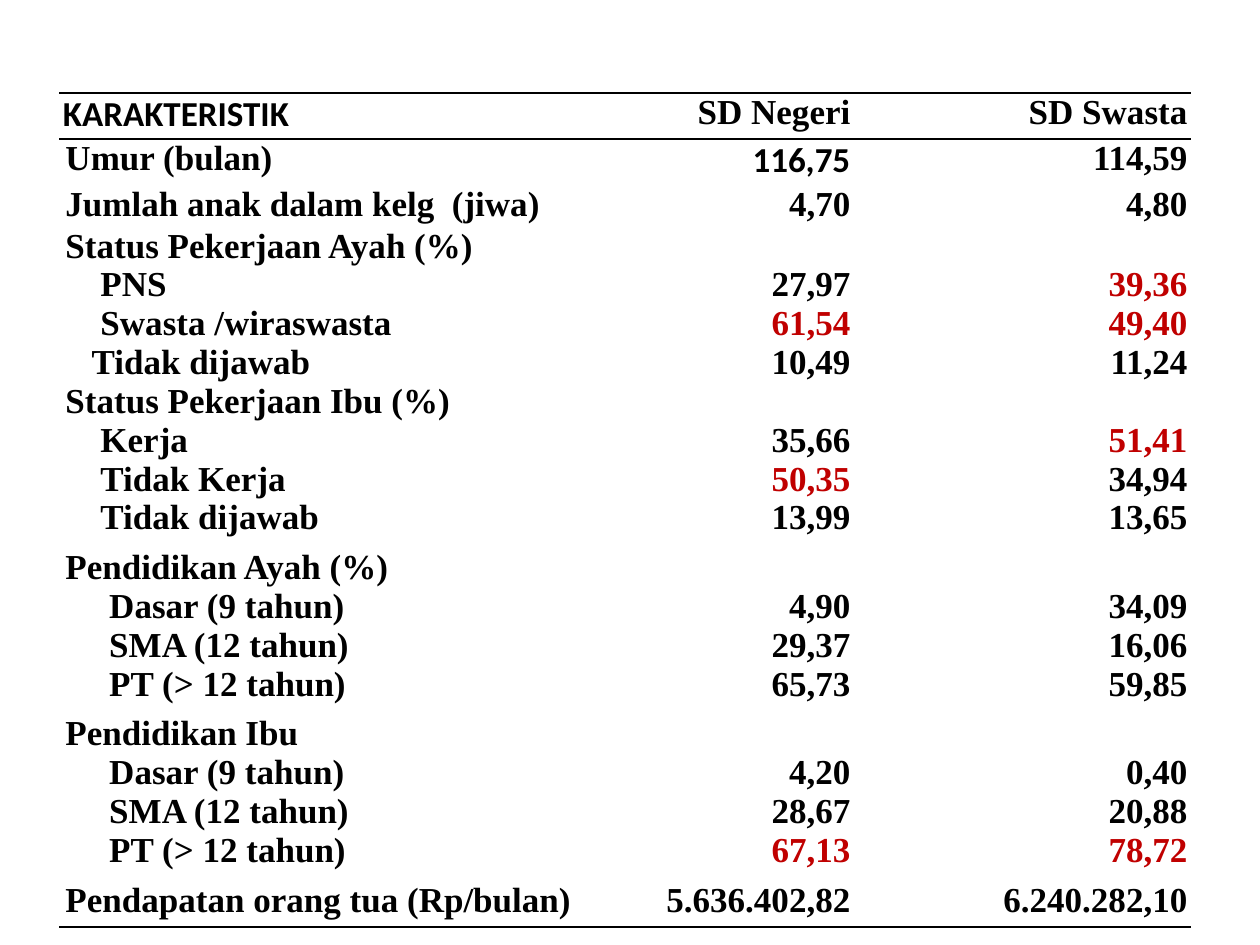
from lxml.etree import SubElement
from pptx import Presentation
from pptx.dml.color import RGBColor
from pptx.enum.text import PP_ALIGN
from pptx.oxml.ns import qn
from pptx.util import Pt

COLORS = {name: RGBColor.from_string(value) for name, value in {
    "black": "000000", "white": "FFFFFF", "red": "C00000"}.items()}
SERIF, SANS = "Times New Roman", "Calibri"
TEXT_SIZE = 20
LINE_HEIGHT = 22.15
FIRST_INDENT = 1.44
COLUMN_WIDTHS = [312, 142.4, 192.6]

# Row height, labels with their indents, then the values of both schools
ROWS = [
    (26.4, [("KARAKTERISTIK", 0)], ["SD Negeri"], ["SD Swasta"]),
    (26.4, [("Umur (bulan)", 0)], ["116,75"], ["114,59"]),
    (23.8, [("Jumlah anak dalam kelg  (jiwa)", 0)], ["4,70"], ["4,80"]),
    (88.6, [("Status Pekerjaan Ayah (%)", 0), ("PNS", 20),
            ("Swasta /wiraswasta", 20), ("Tidak dijawab", 15)],
     ["27,97", "61,54", "10,49"], ["39,36", "49,40", "11,24"]),
    (95, [("Status Pekerjaan Ibu (%)", 0), ("Kerja", 20),
          ("Tidak Kerja", 20), ("Tidak dijawab", 20)],
     ["35,66", "50,35", "13,99"], ["51,41", "34,94", "13,65"]),
    (95, [("Pendidikan Ayah (%)", 0), ("Dasar (9 tahun)", 25),
          ("SMA (12 tahun)", 25), ("PT (> 12 tahun)", 25)],
     ["4,90", "29,37", "65,73"], ["34,09", "16,06", "59,85"]),
    (95, [("Pendidikan Ibu", 0), ("Dasar (9 tahun)", 25),
          ("SMA (12 tahun)", 25), ("PT (> 12 tahun)", 25)],
     ["4,20", "28,67", "67,13"], ["0,40", "20,88", "78,72"]),
    (26.4, [("Pendapatan orang tua (Rp/bulan)", 0)],
     ["5.636.402,82"], ["6.240.282,10"]),
]
HIGHLIGHTS = {"39,36", "61,54", "49,40", "51,41", "50,35", "67,13", "78,72"}
SANS_TEXTS = {"KARAKTERISTIK", "116,75"}
BORDERS = {0: ["a:lnT", "a:lnB"], len(ROWS) - 1: ["a:lnB"]}


def add_border(cell, tag):
    line = SubElement(cell._tc.get_or_add_tcPr(), qn(tag), w=str(Pt(1)))
    fill = SubElement(line, qn("a:solidFill"))
    SubElement(fill, qn("a:srgbClr"), val=str(COLORS["black"]))


presentation = Presentation()
presentation.slide_width, presentation.slide_height = Pt(720), Pt(540)
slide = presentation.slides.add_slide(presentation.slide_layouts[6])

# Table without a banded style
frame = slide.shapes.add_table(
    len(ROWS), len(COLUMN_WIDTHS), Pt(33.8), Pt(53),
    Pt(sum(COLUMN_WIDTHS)), Pt(sum(row[0] for row in ROWS)))
table = frame.table
table.first_row = table.horz_banding = False
style = table._tbl.tblPr.find(qn("a:tableStyleId"))
style.text = "{2D5ABB26-0587-4C30-8999-92F81FD0307C}"
for column, width in zip(table.columns, COLUMN_WIDTHS):
    column.width = Pt(width)

# Cells
for row_index, (height, labels, *values) in enumerate(ROWS):
    table.rows[row_index].height = Pt(height)
    contents = [[label for label, indent in labels], *values]
    for column_index, texts in enumerate(contents):
        cell = table.cell(row_index, column_index)
        cell.margin_left = cell.margin_right = Pt(2.2)
        # Values start beside the first item below the group heading
        cell.margin_top = Pt(LINE_HEIGHT * (len(labels) - len(texts)))
        cell.margin_bottom = Pt(0)
        for tag in BORDERS.get(row_index, []):
            add_border(cell, tag)
        if row_index == 0:
            cell.fill.solid()
            cell.fill.fore_color.rgb = COLORS["white"]
        else:
            cell.fill.background()
        cell.text_frame.text = "\n".join(texts)
        for item, paragraph in enumerate(cell.text_frame.paragraphs):
            text = paragraph.text
            if column_index > 0:
                paragraph.alignment = PP_ALIGN.RIGHT
            elif row_index > 0:
                indent = Pt(FIRST_INDENT + labels[item][1])
                paragraph._p.get_or_add_pPr().set("marL", str(indent))
            font = paragraph.runs[0].font
            font.name = SANS if text in SANS_TEXTS else SERIF
            font.size, font.bold = Pt(TEXT_SIZE), True
            font.color.rgb = COLORS["red" if text in HIGHLIGHTS else "black"]

presentation.save("out.pptx")
